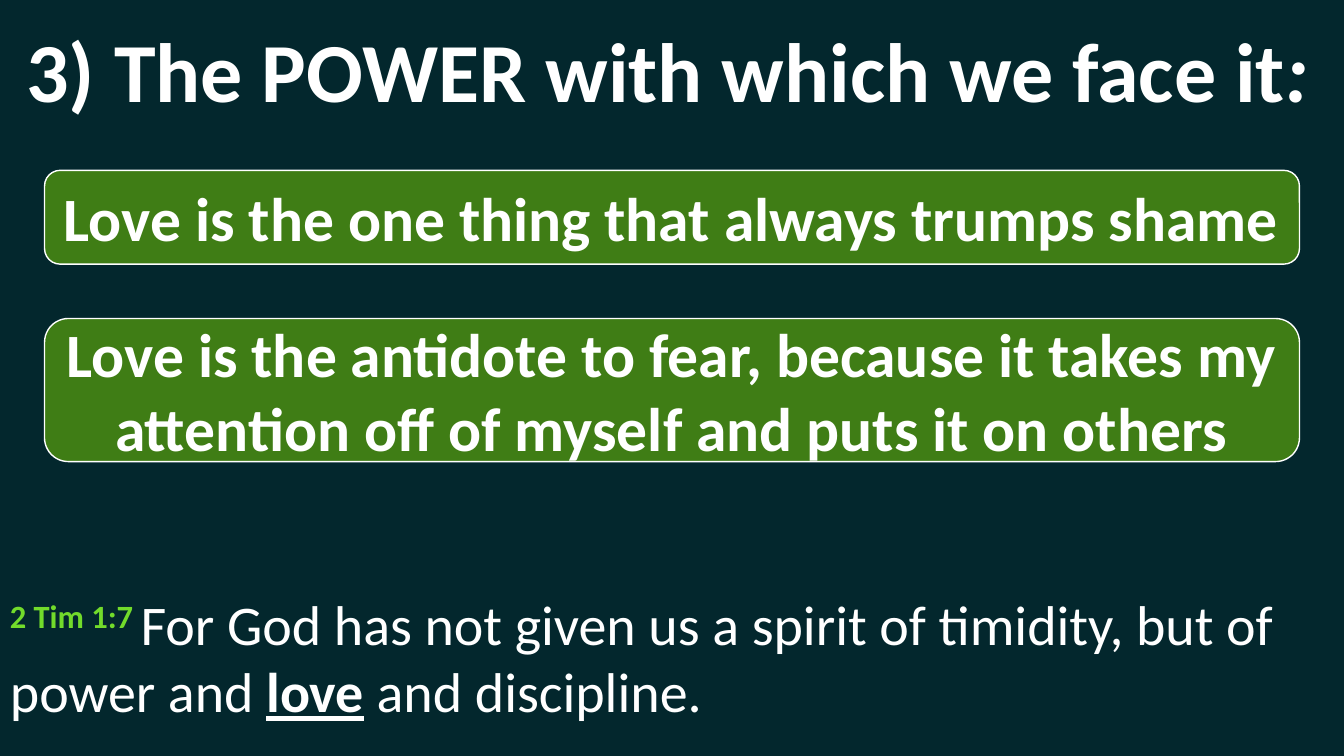
"""Build a slide with a title, two statements about love and a Bible verse."""
import pptx
import pptx.dml.color
import pptx.enum.shapes
import pptx.enum.text
import pptx.util

Pt = pptx.util.Pt
RGBColor = pptx.dml.color.RGBColor
SHAPE = pptx.enum.shapes.MSO_SHAPE
ALIGN = pptx.enum.text.PP_ALIGN
ANCHOR = pptx.enum.text.MSO_ANCHOR

NIGHT = RGBColor(0x03, 0x27, 0x2D)
GREEN = RGBColor(0x3F, 0x7D, 0x15)
LIME = RGBColor(0x72, 0xDB, 0x2B)
WHITE = RGBColor(0xFF, 0xFF, 0xFF)

FONT = "Calibri"
WIDTH, HEIGHT = 960, 540
BOX_WIDTH = 896.4
VERSE_HEIGHT = 141.8

TITLE = [
    ("3) The POWER with which we face it", {"bold": True}),
    (":", {"bold": True, "italic": True}),
]
STATEMENTS = [
    ("Love is the one thing that always trumps shame", 121.7, 67),
    ("Love is the antidote to fear, because it takes my attention off of myself "
     "and puts it on others", 227.5, 102.2),
]
VERSE = [
    ("2 Tim 1:7\u00a0", {"bold": True, "color": LIME, "raised": True}),
    ("For God has not given us a\u00a0spirit of\u00a0timidity, but of power and ", {}),
    ("love", {"bold": True, "underline": True}),
    (" and\u00a0discipline.", {}),
]


def write(shape, pieces, size, alignment, anchor):
    """Fill a shape with one paragraph of styled runs."""
    frame = shape.text_frame
    frame.word_wrap = True
    frame.vertical_anchor = anchor
    paragraph = frame.paragraphs[0]
    paragraph.alignment = alignment
    for text, style in pieces:
        run = paragraph.add_run()
        run.text = text
        run.font.name = FONT
        run.font.size = Pt(size)
        run.font.bold = style.get("bold", False)
        run.font.italic = style.get("italic", False)
        run.font.underline = style.get("underline", False)
        run.font.color.rgb = style.get("color", WHITE)
        if style.get("raised"):
            run._r.get_or_add_rPr().set("baseline", "30000")


def add_panel(slide, kind, left, top, width, height, fill):
    """Add a filled shape without shadow or outline."""
    shape = slide.shapes.add_shape(kind, Pt(left), Pt(top), Pt(width), Pt(height))
    shape.shadow.inherit = False
    shape.fill.solid()
    shape.fill.fore_color.rgb = fill
    shape.line.fill.background()
    return shape


def main():
    """Build and save the presentation."""
    presentation = pptx.Presentation()
    presentation.slide_width, presentation.slide_height = Pt(WIDTH), Pt(HEIGHT)
    slide = presentation.slides.add_slide(presentation.slide_layouts[6])
    slide.background.fill.solid()
    slide.background.fill.fore_color.rgb = NIGHT

    title = slide.shapes.add_textbox(Pt(6.5), Pt(10), Pt(941), Pt(80))
    write(title, TITLE, 60, ALIGN.CENTER, ANCHOR.TOP)

    verse = add_panel(slide, SHAPE.RECTANGLE, 0, HEIGHT - VERSE_HEIGHT,
                      WIDTH, VERSE_HEIGHT, NIGHT)
    write(verse, VERSE, 40, ALIGN.LEFT, ANCHOR.MIDDLE)

    for text, top, height in STATEMENTS:
        box = add_panel(slide, SHAPE.ROUNDED_RECTANGLE, (WIDTH - BOX_WIDTH) / 2, top,
                        BOX_WIDTH, height, GREEN)
        box.line.color.rgb = WHITE
        box.line.width = Pt(1)
        write(box, [(text, {"bold": True})], 44, ALIGN.CENTER, ANCHOR.MIDDLE)

    presentation.save("out.pptx")


if __name__ == "__main__":
    main()
